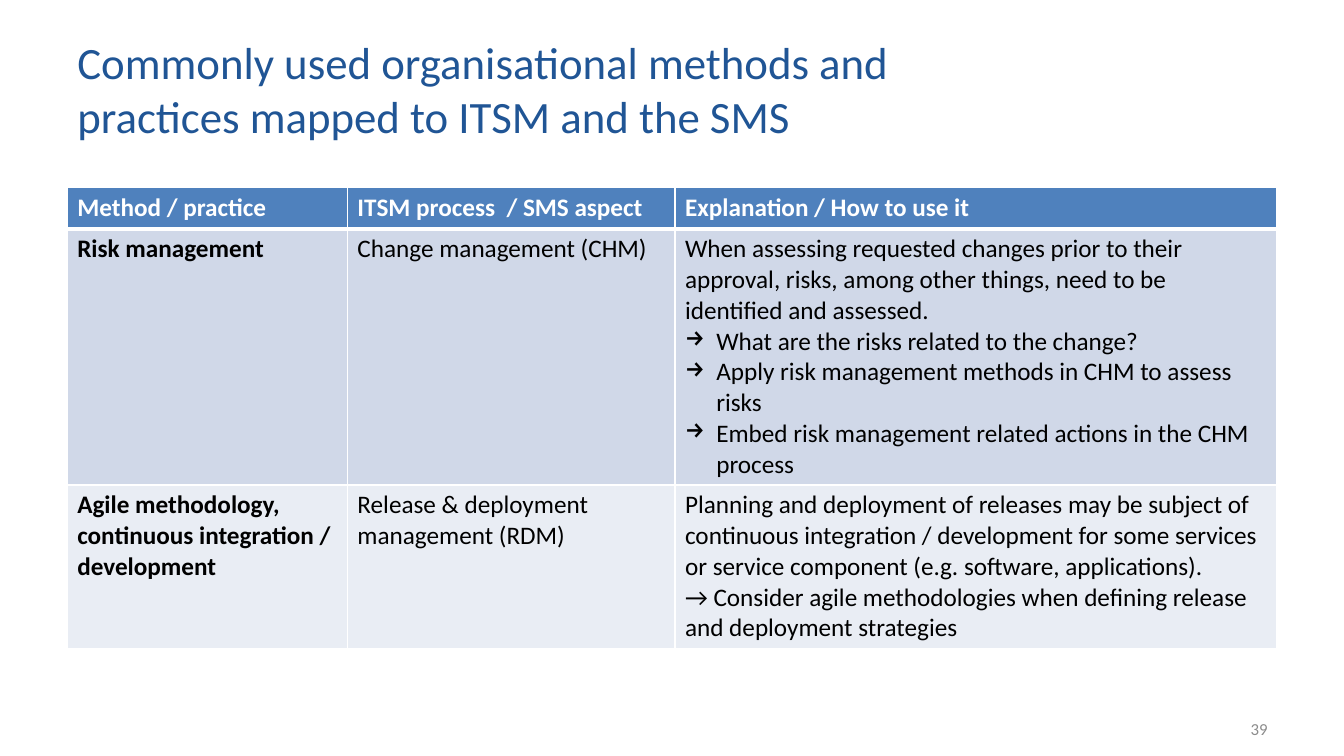
from lxml.etree import SubElement
from pptx import Presentation
from pptx.dml.color import RGBColor
from pptx.enum.text import MSO_ANCHOR, MSO_AUTO_SIZE, PP_ALIGN
from pptx.oxml.ns import qn
from pptx.util import Inches, Pt

COLORS = {
    "title": "205595", "header": "4F81BD", "band": "D0D8E8", "light": "E9EDF4",
    "white": "FFFFFF", "black": "000000", "grey": "8C8C8C",
}
GRID_COLS, GRID_ROWS = 40, 50
COL_WIDTHS = [8.34, 9.75, 17.91]
ROW_HEIGHTS = [2.73, 16.93, 10.8]
HEADER = ["Method / practice", "ITSM process  / SMS aspect", "Explanation / How to use it"]
METHODS = [
    ["Risk management", "Change management (CHM)", [
        "When assessing requested changes prior to their approval, risks, among other things, "
        "need to be identified and assessed.",
        ("→", "What are the risks related to the change?"),
        ("→", "Apply risk management methods in CHM to assess risks"),
        ("→", "Embed risk management related actions in the CHM process"),
    ]],
    ["Agile methodology, continuous integration / development",
     "Release & deployment management (RDM)", [
        "Planning and deployment of releases may be subject of continuous integration / "
        "development for some services or service component (e.g. software, applications).",
        "→ Consider agile methodologies when defining release and deployment strategies",
    ]],
]


def add_bullet(p, char, indent=0.31):
    pPr = p._p.get_or_add_pPr()
    pPr.set("marL", str(Inches(indent)))
    pPr.set("indent", str(Inches(-indent)))
    SubElement(pPr, qn("a:buChar"), char=char)


def write(tf, text, size=18, color="black", bold=False, align=PP_ALIGN.LEFT):
    items = text if isinstance(text, list) else [text]
    for i, item in enumerate(items):
        p = tf.add_paragraph() if i else tf.paragraphs[0]
        if isinstance(item, tuple):
            char, item = item
            add_bullet(p, char)
        p.alignment = align
        r = p.add_run()
        r.text = item
        r.font.name = "Calibri"
        r.font.size = Pt(size)
        r.font.bold = bold
        r.font.color.rgb = RGBColor.from_string(COLORS[color])


def add_borders(cell, bottom):
    tcPr = cell._tc.get_or_add_tcPr()
    for side, width in (("L", 1), ("R", 1), ("T", 1), ("B", bottom)):
        ln = SubElement(tcPr, qn(f"a:ln{side}"), w=str(Pt(width)))
        fill = SubElement(ln, qn("a:solidFill"))
        SubElement(fill, qn("a:srgbClr"), val=COLORS["white"])


class SlideBuilder:
    def __init__(self, prs):
        self.col = prs.slide_width / GRID_COLS
        self.row = prs.slide_height / GRID_ROWS
        self.s = prs.slides.add_slide(prs.slide_layouts[5])

    def box(self, x, y, w, h):
        return int(x * self.col), int(y * self.row), int(w * self.col), int(h * self.row)

    def title(self, text, *area):
        sp = self.s.shapes.title
        sp.left, sp.top, sp.width, sp.height = self.box(*area)
        tf = sp.text_frame
        tf.word_wrap = True
        tf.auto_size = MSO_AUTO_SIZE.NONE
        tf.vertical_anchor = MSO_ANCHOR.MIDDLE
        write(tf, text, size=32, color="title")

    def text(self, text, *area, **style):
        tf = self.s.shapes.add_textbox(*self.box(*area)).text_frame
        tf.word_wrap = True
        tf.vertical_anchor = MSO_ANCHOR.MIDDLE
        write(tf, text, **style)

    def table(self, rows, x, y):
        area = self.box(x, y, sum(COL_WIDTHS), sum(ROW_HEIGHTS))
        table = self.s.shapes.add_table(len(rows), len(COL_WIDTHS), *area).table
        for column, width in zip(table.columns, COL_WIDTHS):
            column.width = int(width * self.col)
        for i, (row, height) in enumerate(zip(rows, ROW_HEIGHTS)):
            table.rows[i].height = int(height * self.row)
            fill = "header" if i == 0 else ("light", "band")[i % 2]
            for j, text in enumerate(row):
                cell = table.cell(i, j)
                add_borders(cell, 1 if i else 3)
                cell.fill.solid()
                cell.fill.fore_color.rgb = RGBColor.from_string(COLORS[fill])
                write(cell.text_frame, text, color="black" if i else "white",
                      bold=i == 0 or j == 0)


def main():
    prs = Presentation()
    prs.slide_width, prs.slide_height = Inches(13.33), Inches(7.5)
    slide = SlideBuilder(prs)
    slide.title("Commonly used organisational methods and practices mapped to ITSM and the SMS",
                2, 2, 29.74, 7.67)
    slide.table([HEADER, *METHODS], 2, 12.4)
    slide.text("39", 28.69, 46.87, 9.33, 2.67, size=12, color="grey", align=PP_ALIGN.RIGHT)
    prs.save("out.pptx")


if __name__ == "__main__":
    main()
